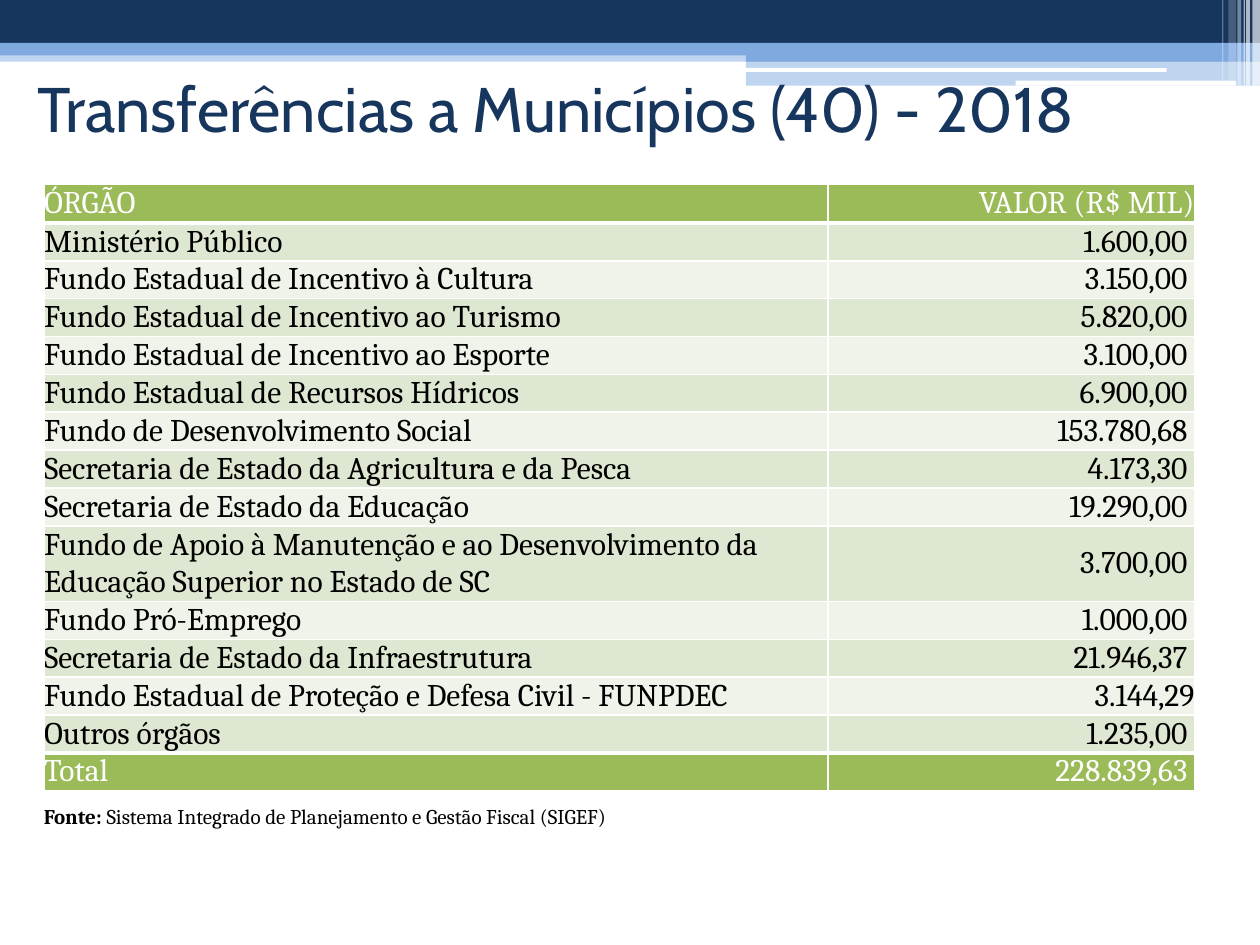
"""Build the slide of 2018 transfers to municipalities by state body."""
from dataclasses import dataclass

import pptx
import pptx.dml.color
import pptx.enum.shapes
import pptx.enum.text
import pptx.oxml
import pptx.oxml.ns
import pptx.util
from lxml import etree

Inches = pptx.util.Inches
Pt = pptx.util.Pt
RGBColor = pptx.dml.color.RGBColor
MSO_SHAPE = pptx.enum.shapes.MSO_SHAPE
MSO_ANCHOR = pptx.enum.text.MSO_ANCHOR
PP_ALIGN = pptx.enum.text.PP_ALIGN
qn = pptx.oxml.ns.qn

NAVY = RGBColor(0x17, 0x36, 0x5D)
BLUE = RGBColor(0x80, 0xAA, 0xDF)
WHITE = RGBColor(0xFF, 0xFF, 0xFF)
BLACK = RGBColor(0x00, 0x00, 0x00)
GREEN = RGBColor(0x9B, 0xBB, 0x59)
BANDS = (RGBColor(0xDE, 0xE7, 0xD1), RGBColor(0xEF, 0xF3, 0xEA))


@dataclass
class Bar:
    left: float
    top: float
    width: float
    height: float
    color: RGBColor
    opacity: int = 100
    rounded: bool = False


@dataclass
class Transfer:
    body: str
    value: str
    height: float = 0.3


BARS = [
    Bar(0, 0.4, 10, 0.09, BLUE, 50),
    Bar(0, 0, 10, 0.34, NAVY),
    Bar(0, 0.34, 10, 0.1, BLUE),
    Bar(5.92, 0.39, 4.08, 0.1, BLUE),
    Bar(5.92, 0.48, 4.08, 0.2, BLUE, 50),
    Bar(5.91, 0.54, 3.35, 0.03, WHITE, rounded=True),
    Bar(8.06, 0.64, 1.75, 0.04, WHITE, rounded=True),
    Bar(9.94, 0, 0.06, 0.68, WHITE, 65),
    Bar(9.89, 0, 0.03, 0.68, WHITE, 65),
    Bar(9.87, 0, 0.01, 0.68, WHITE, 60),
    Bar(9.82, 0, 0.03, 0.68, WHITE, 40),
    Bar(9.75, 0, 0.06, 0.64, WHITE, 20),
    Bar(9.7, 0, 0.01, 0.64, WHITE, 30),
]

TRANSFERS = [
    Transfer("ÓRGÃO", "VALOR (R$ MIL)", 0.31),
    Transfer("Ministério Público", "1.600,00 "),
    Transfer("Fundo Estadual de Incentivo à Cultura", "3.150,00 "),
    Transfer("Fundo Estadual de Incentivo ao Turismo", "5.820,00 "),
    Transfer("Fundo Estadual de Incentivo ao Esporte", "3.100,00 "),
    Transfer("Fundo Estadual de Recursos Hídricos", "6.900,00 "),
    Transfer("Fundo de Desenvolvimento Social", "153.780,68 "),
    Transfer("Secretaria de Estado da Agricultura e da Pesca", "4.173,30 "),
    Transfer("Secretaria de Estado da Educação", "19.290,00 "),
    Transfer("Fundo de Apoio à Manutenção e ao Desenvolvimento da "
             "Educação Superior no Estado de SC", "3.700,00 ", 0.6),
    Transfer("Fundo Pró-Emprego", "1.000,00 "),
    Transfer("Secretaria de Estado da Infraestrutura", "21.946,37 "),
    Transfer("Fundo Estadual de Proteção e Defesa Civil - FUNPDEC", "3.144,29"),
    Transfer("Outros órgãos", "1.235,00 "),
    Transfer("Total", "228.839,63 "),
]


def add_text(p, text: str, *, size: float, font: str = "Cambria",
             color: RGBColor = BLACK, bold: bool = False) -> None:
    r = p.add_run()
    r.text = text
    r.font.size = Pt(size)
    r.font.name = font
    r.font.color.rgb = color
    r.font.bold = bold


def add_box(s, left: float, top: float, width: float, height: float):
    sp = s.shapes.add_textbox(Inches(left), Inches(top), Inches(width), Inches(height))
    sp.text_frame.word_wrap = True
    return sp.text_frame


def add_bar(s, bar: Bar) -> None:
    kind = MSO_SHAPE.ROUNDED_RECTANGLE if bar.rounded else MSO_SHAPE.RECTANGLE
    sp = s.shapes.add_shape(kind, Inches(bar.left), Inches(bar.top),
                            Inches(bar.width), Inches(bar.height))
    sp.shadow.inherit = False
    sp.line.fill.background()
    sp.fill.solid()
    sp.fill.fore_color.rgb = bar.color
    if bar.opacity < 100:
        color = sp.fill._xPr.find(qn("a:solidFill"))[0]
        etree.SubElement(color, qn("a:alpha"), val=str(bar.opacity * 1000))


def set_borders(cell, **widths: float) -> None:
    tc_pr = cell._tc.get_or_add_tcPr()
    for side in "LRTB":
        ln = etree.SubElement(tc_pr, qn(f"a:ln{side}"), w=str(Pt(widths.get(side, 1))))
        fill = etree.SubElement(ln, qn("a:solidFill"))
        etree.SubElement(fill, qn("a:srgbClr"), val=str(WHITE))


def add_table(s, transfers: list[Transfer]) -> None:
    last = len(transfers) - 1
    height = sum(t.height for t in transfers)
    table = s.shapes.add_table(len(transfers), 2, Inches(0.35), Inches(1.46),
                               Inches(9.13), Inches(height)).table
    table.columns[0].width = Inches(6.22)
    table.columns[1].width = Inches(2.91)
    for i, transfer in enumerate(transfers):
        table.rows[i].height = Inches(transfer.height)
        strong = i in (0, last)
        columns = ((transfer.body, PP_ALIGN.LEFT), (transfer.value, PP_ALIGN.RIGHT))
        for j, (text, align) in enumerate(columns):
            cell = table.cell(i, j)
            cell.margin_left = cell.margin_right = 0
            cell.margin_top = cell.margin_bottom = 0
            cell.vertical_anchor = MSO_ANCHOR.MIDDLE
            set_borders(cell, T=3 if i in (1, last) else 1,
                        B=3 if i in (0, last - 1) else 1)
            cell.fill.solid()
            cell.fill.fore_color.rgb = GREEN if strong else BANDS[(i - 1) % 2]
            p = cell.text_frame.paragraphs[0]
            p.alignment = align
            add_text(p, text, size=18, color=WHITE if strong else BLACK)


def main() -> None:
    prs = pptx.Presentation()
    prs.slide_width, prs.slide_height = Inches(10), Inches(7.5)
    s = prs.slides.add_slide(prs.slide_layouts[6])
    for bar in BARS:
        add_bar(s, bar)

    tf = add_box(s, 0.2, 0.52, 9.29, 0.67)
    tf.vertical_anchor = MSO_ANCHOR.MIDDLE
    add_text(tf.paragraphs[0], "Transferências a Municípios (40) - 2018",
             size=36, font="Cabin", color=NAVY)

    p = add_box(s, 0.25, 6.33, 7, 0.3).paragraphs[0]
    add_text(p, "Fonte: ", size=12, bold=True)
    add_text(p, "Sistema Integrado de Planejamento e Gestão Fiscal (SIGEF)", size=12)

    add_table(s, TRANSFERS)
    prs.save("out.pptx")


if __name__ == "__main__":
    main()
